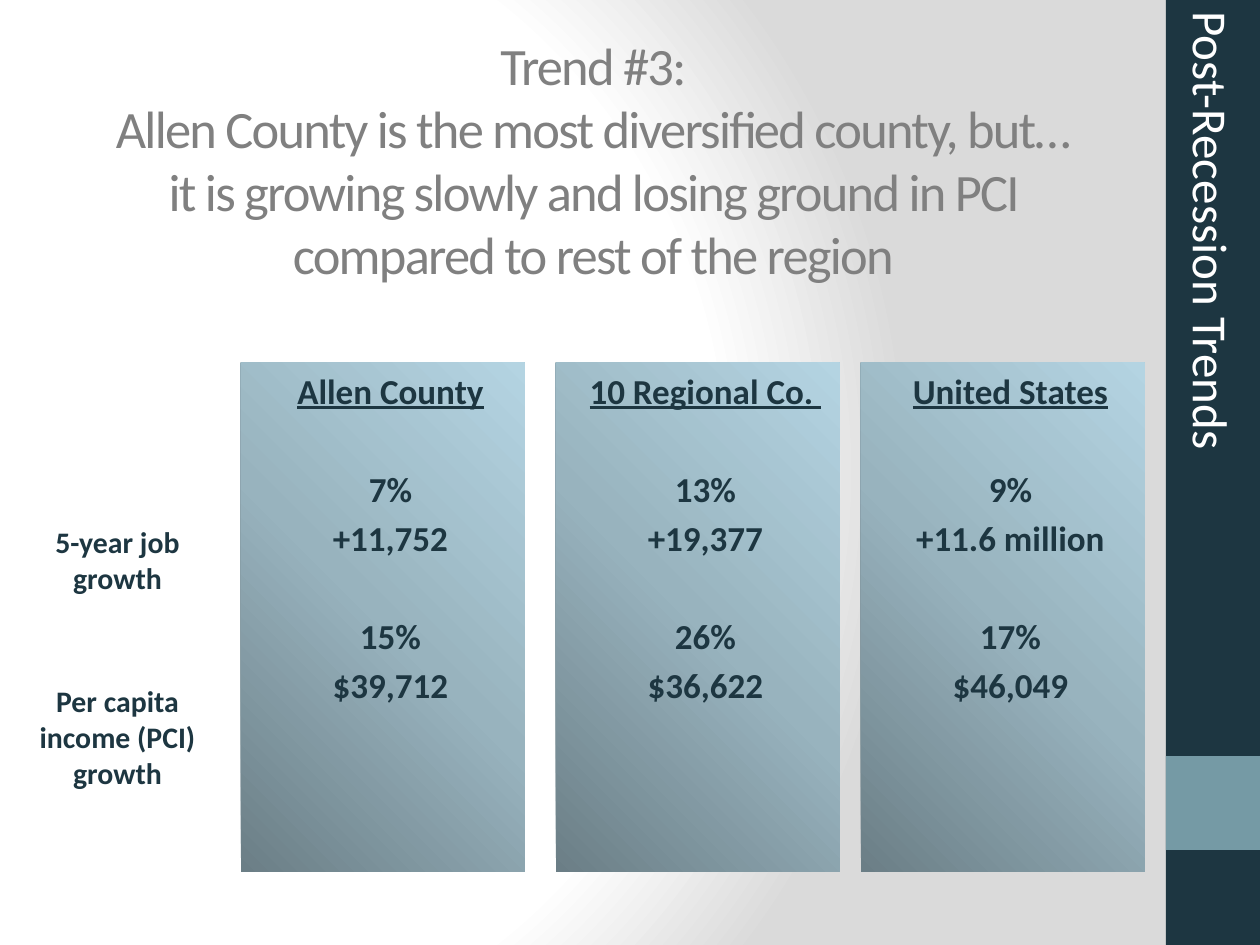
"""Build the Trend #3 slide comparing county, regional and national growth."""
from pptx import Presentation
from pptx.dml.color import RGBColor
from pptx.enum.shapes import MSO_SHAPE
from pptx.enum.text import MSO_ANCHOR, PP_ALIGN
from pptx.oxml import parse_xml
from pptx.oxml.ns import nsdecls
from pptx.util import Pt

PX = 914400 // 126
RECT = MSO_SHAPE.RECTANGLE
TOP, MIDDLE = MSO_ANCHOR.TOP, MSO_ANCHOR.MIDDLE
CENTER = PP_ALIGN.CENTER
NAVY = RGBColor(0x1D, 0x36, 0x41)
TEAL = RGBColor(0x75, 0x9A, 0xA5)
GRAY = RGBColor(0x80, 0x80, 0x80)
WHITE = RGBColor(0xFF, 0xFF, 0xFF)
GRADIENT = '<a:gradFill %s rotWithShape="1"><a:gsLst>%s</a:gsLst>%s</a:gradFill>'
STOP = '<a:gs pos="%d"><a:srgbClr val="%s"/></a:gs>'
PANEL_STOPS = [(0, "6B7E86"), (50000, "98B3BE"), (100000, "B4D4E2")]
PAGE_STOPS = [(0, "FFFFFF"), (75000, "FFFFFF"), (100000, "DADADA")]
PANEL_FILL = GRADIENT % (nsdecls("a"), "".join(STOP % stop for stop in PANEL_STOPS),
                         '<a:lin ang="18900000" scaled="1"/>')
PAGE_FILL = GRADIENT % (nsdecls("a"), "".join(STOP % stop for stop in PAGE_STOPS),
                        '<a:path path="circle"><a:fillToRect l="20000" t="50000" '
                        'r="100000" b="50000"/></a:path>')


def add_rect(x, y, w, h, color=None):
    sp = s.shapes.add_shape(RECT, x * PX, y * PX, w * PX, h * PX)
    sp.shadow.inherit = False
    sp.line.fill.background()
    if color is None:
        sp.fill.background()
        fill = sp.fill._xPr.find("{http://schemas.openxmlformats.org/drawingml/2006/main}noFill")
        fill.getparent().replace(fill, parse_xml(PANEL_FILL))
    else:
        sp.fill.solid()
        sp.fill.fore_color.rgb = color
    sp.text_frame.word_wrap = True
    sp.text_frame.vertical_anchor = TOP
    return sp


def add_run(p, text, size, color, bold=False, underline=False):
    r = p.add_run()
    r.text = text
    r.font.name = "Calibri"
    r.font.size = Pt(size)
    r.font.color.rgb = color
    r.font.bold = bold
    r.font.underline = underline
    return r


prs = Presentation()
prs.slide_width, prs.slide_height = 1260 * PX, 945 * PX
s = prs.slides.add_slide(prs.slide_layouts[6])
s.element.cSld.insert(0, parse_xml(
    "<p:bg %s><p:bgPr>%s<a:effectLst/></p:bgPr></p:bg>" % (nsdecls("p", "a"), PAGE_FILL)))

add_rect(1166, 0, 94, 945, NAVY)
add_rect(1166, 756, 94, 94, TEAL)

title = s.shapes.add_textbox(63 * PX, 38 * PX, 1061 * PX, 298 * PX)
tf = title.text_frame
tf.word_wrap = True
tf.vertical_anchor = MIDDLE
tf.margin_top, tf.margin_bottom = 0, 56 * PX
p = tf.paragraphs[0]
p.alignment = CENTER
TITLE_LINES = [
    "Trend #3:",
    "Allen County is the most diversified county, but…",
    "it is growing slowly and losing ground in PCI compared to rest of the region",
]
for i, line in enumerate(TITLE_LINES):
    if i:
        p.add_line_break()
    r = add_run(p, line, 30, GRAY)
    r.font._element.set("spc", "-100")

side = s.shapes.add_textbox(839 * PX, 336 * PX, 746 * PX, 72 * PX)
side.rotation = 90
side.text_frame.word_wrap = True
add_run(side.text_frame.paragraphs[0], "Post-Recession Trends", 28, WHITE)

PANELS = [
    (241, ["Allen County", "7%", "+11,752", "15%", "$39,712"]),
    (556, ["10 Regional Co. ", "13%", "+19,377", "26%", "$36,622"]),
    (861, ["United States", "9%", "+11.6 million", "17%", "$46,049"]),
]
PANEL_GAPS = [0, 32, 4, 32, 4]
LABELS = ["5-year job growth", "Per capita income (PCI) growth"]
LABEL_GAPS = [0, 50]

blocks = [(add_rect(0, 362, 220, 509, WHITE), LABELS, LABEL_GAPS, 17)]
blocks += [(add_rect(x, 363, 284, 509), lines, PANEL_GAPS, 20) for x, lines in PANELS]
blocks[0][0].text_frame.margin_top = 162 * PX
for sp, lines, gaps, size in blocks:
    tf = sp.text_frame
    for i, (line, gap) in enumerate(zip(lines, gaps)):
        p = tf.add_paragraph() if i else tf.paragraphs[0]
        p.alignment = CENTER
        p.space_before = Pt(gap)
        p._p.get_or_add_pPr().set("marL", str(15 * PX))
        add_run(p, line, size, NAVY, True, size == 20 and i == 0)

prs.save("out.pptx")
